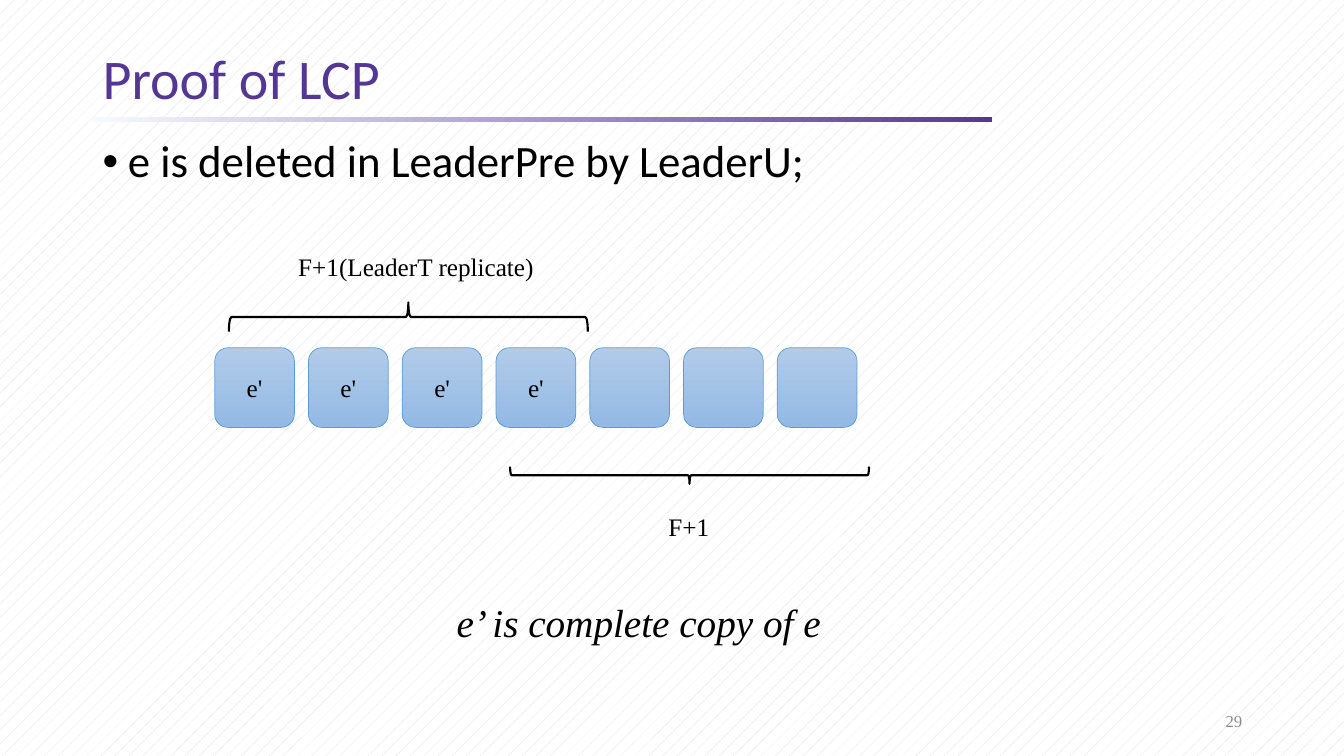
import pptx
import pptx.dml.color
import pptx.enum.dml
import pptx.enum.shapes
import pptx.enum.text
import pptx.oxml
import pptx.util

Inches = pptx.util.Inches
Pt = pptx.util.Pt
RGBColor = pptx.dml.color.RGBColor
SHAPE = pptx.enum.shapes.MSO_SHAPE
ALIGN = pptx.enum.text.PP_ALIGN
ANCHOR = pptx.enum.text.MSO_ANCHOR

PURPLE = RGBColor(0x54, 0x37, 0x95)
PALE = RGBColor(0xF7, 0xFA, 0xFD)
BLACK = RGBColor(0x00, 0x00, 0x00)
WHITE = RGBColor(0xFF, 0xFF, 0xFF)
GREY = RGBColor(0x8C, 0x8C, 0x8C)
HATCH = RGBColor(0xD9, 0xD9, 0xD9)
NODE_TOP = RGBColor(0xB1, 0xCB, 0xE9)
NODE_BOTTOM = RGBColor(0x93, 0xB9, 0xE4)
NODE_EDGE = RGBColor(0x5B, 0x9B, 0xD5)

SANS = "Calibri"
SERIF = "Times New Roman"


def style(paragraph, font, size, color=BLACK, italic=False):
    for run in paragraph.runs:
        run.font.name = font
        run.font.size = Pt(size)
        run.font.color.rgb = color
        run.font.italic = italic


def add_text(slide, box, text, font, size, color=BLACK, align=ALIGN.LEFT,
             anchor=ANCHOR.TOP, italic=False, wrap=True):
    """Add a text box and return its only paragraph."""
    frame = slide.shapes.add_textbox(*map(Inches, box)).text_frame
    frame.word_wrap = wrap
    frame.vertical_anchor = anchor
    frame.text = text
    paragraph = frame.paragraphs[0]
    paragraph.alignment = align
    style(paragraph, font, size, color, italic)
    return paragraph


def add_gradient_shape(slide, preset, box, colors, angle):
    shape = slide.shapes.add_shape(preset, *map(Inches, box))
    shape.shadow.inherit = False
    shape.fill.gradient()
    shape.fill.gradient_angle = angle
    for stop, color in zip(shape.fill.gradient_stops, colors):
        stop.color.rgb = color
    return shape


def set_background(slide):
    fill = slide.background.fill
    fill.patterned()
    fill.pattern = pptx.enum.dml.MSO_PATTERN.PERCENT_5
    fill.fore_color.rgb = HATCH
    fill.back_color.rgb = WHITE


def add_heading(slide, left, top, width, height):
    rule = add_gradient_shape(slide, SHAPE.RECTANGLE, (left, top + 0.73, 8.92, 0.05),
                              (PALE, PURPLE), 0)
    rule.line.fill.background()
    title = add_text(slide, (left, top, width, height), "Proof of LCP", SANS, 40,
                     PURPLE, anchor=ANCHOR.MIDDLE)
    title.line_spacing = 0.9


def add_bullet(slide, left, top, width, height):
    claim = add_text(slide, (left, top, width, height),
                     "e is deleted in LeaderPre by LeaderU;", SANS, 32)
    claim.line_spacing = 0.9
    properties = claim._p.get_or_add_pPr()
    properties.set("marL", str(Inches(0.25)))
    properties.set("indent", str(Inches(-0.25)))
    namespace = pptx.oxml.ns.nsdecls("a")
    for tag in ('buFont {} typeface="Arial"', 'buChar {} char="•"'):
        properties.append(pptx.oxml.parse_xml(f"<a:{tag.format(namespace)}/>"))


def add_brace(slide, left, top, width, height, rotation):
    """Add a horizontal brace that fills the given box once it is turned."""
    x = left + (width - height) / 2
    y = top + (height - width) / 2
    brace = slide.shapes.add_shape(SHAPE.LEFT_BRACE, *map(Inches, (x, y, height, width)))
    brace.rotation = rotation
    brace.shadow.inherit = False
    brace.fill.background()
    brace.line.color.rgb = BLACK
    brace.line.width = Pt(1.5)


def add_replicas(slide, left, top):
    """Add the row of replicas with its two overlapping majorities."""
    size, pitch = 0.79, 0.93
    for index, entry in enumerate(["e'"] * 4 + [""] * 3):
        node = add_gradient_shape(slide, SHAPE.ROUNDED_RECTANGLE,
                                  (left + index * pitch, top, size, size),
                                  (NODE_TOP, NODE_BOTTOM), 270)
        node.line.color.rgb = NODE_EDGE
        node.line.width = Pt(0.5)
        if entry:
            node.text_frame.text = entry
            node.text_frame.vertical_anchor = ANCHOR.MIDDLE
            label = node.text_frame.paragraphs[0]
            label.alignment = ALIGN.CENTER
            style(label, SERIF, 18)

    add_brace(slide, left + 0.14, top - 0.45, 3.56, 0.29, 90)
    add_text(slide, (left + 0.73, top - 1.01, 2.56, 0.4), "F+1(LeaderT replicate)",
             SERIF, 18)
    add_brace(slide, left + 2.93, top + 1.18, 3.56, 0.17, 270)
    add_text(slide, (left + 4.4, top + 1.57, 0.61, 0.4), "F+1", SERIF, 18)


def main():
    deck = pptx.Presentation()
    deck.slide_width = Inches(13.33)
    deck.slide_height = Inches(7.5)
    slide = deck.slides.add_slide(deck.slide_layouts[6])
    set_background(slide)
    add_heading(slide, 0.92, 0.43, 11.5, 0.75)
    add_bullet(slide, 0.92, 1.33, 11.5, 0.65)
    add_replicas(slide, 2.13, 3.45)
    add_text(slide, (4.43, 5.89, 3.85, 0.57), "e’ is complete copy of e", SERIF, 28,
             italic=True, wrap=False)
    add_text(slide, (9.42, 6.95, 3, 0.4), "29", SERIF, 12, GREY, ALIGN.RIGHT,
             ANCHOR.MIDDLE)
    deck.save("out.pptx")


if __name__ == "__main__":
    main()
